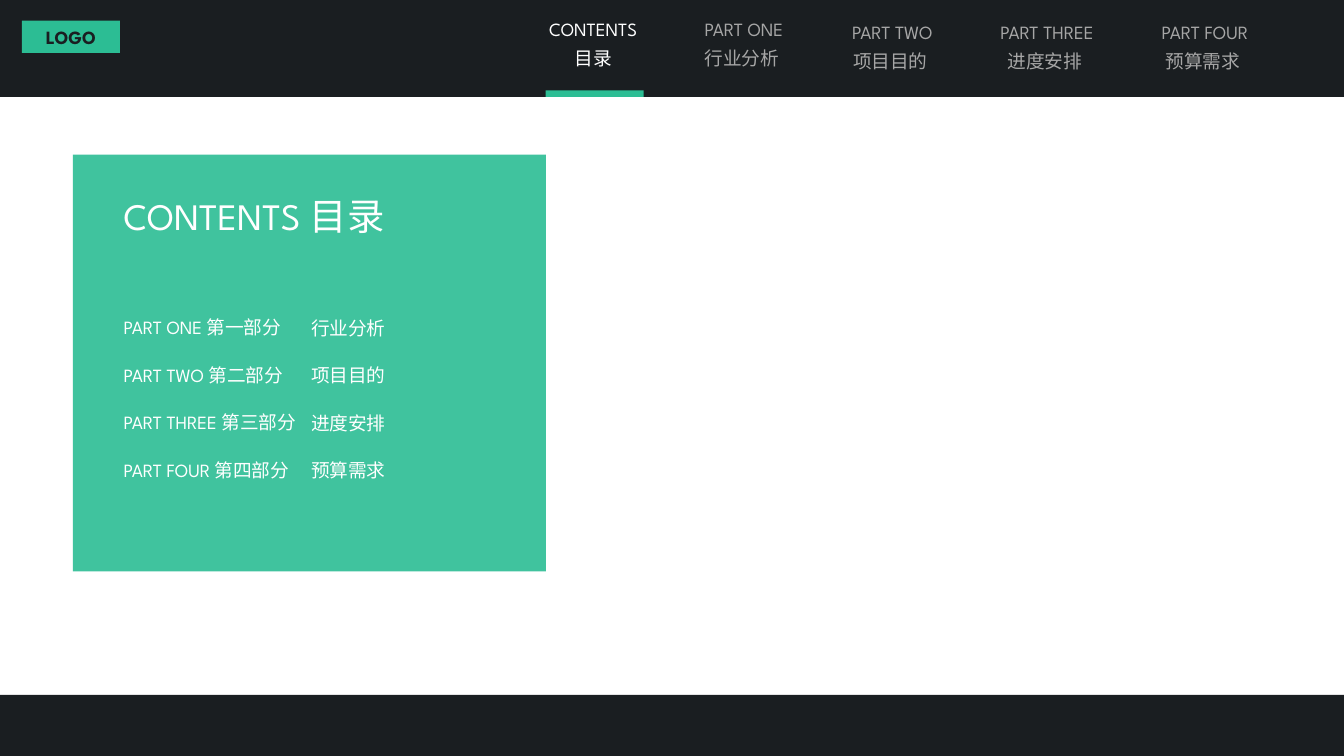
from lxml import etree
from pptx import Presentation
from pptx.dml.color import RGBColor
from pptx.enum.shapes import MSO_SHAPE
from pptx.enum.text import MSO_ANCHOR, MSO_AUTO_SIZE, PP_ALIGN
from pptx.oxml.ns import qn
from pptx.util import Inches, Pt

COLS, ROWS = 100, 56.25
CELL = Inches(0.1)
FONT = "League Spartan"
DARK, GREEN, GREY, WHITE = "1A1E21", "2CBD94", "A6A6A6", "FFFFFF"

PARTS = [
    ("PART ONE", "第一部分", "行业分析"),
    ("PART TWO", "第二部分", "项目目的"),
    ("PART THREE", "第三部分", "进度安排"),
    ("PART FOUR", "第四部分", "预算需求"),
]
TAB_BOXES = [(50.8, 0.35, 9.1), (61.75, 0.55, 9.3), (72.5, 0.55, 10.8), (84.65, 0.55, 10)]
LABEL_WIDTHS = [15, 15.3, 16.7, 16]


def color(value):
    return RGBColor.from_string(value)


def grid(*lengths):
    return [round(n * CELL) for n in lengths]


def style(tf, size, fill, align, bold=None, spacing=None):
    for p in tf.paragraphs:
        p.alignment = align
        p.line_spacing = spacing
        for r in p.runs:
            r.font.name = FONT
            r.font.size = Pt(size)
            r.font.bold = bold
            r.font.color.rgb = color(fill)


def add_block(slide, box, fill, opacity=None):
    sp = slide.shapes.add_shape(MSO_SHAPE.RECTANGLE, *grid(*box))
    sp.shadow.inherit = False
    sp.fill.solid()
    sp.fill.fore_color.rgb = color(fill)
    sp.line.fill.background()
    if opacity:
        clr = sp._element.spPr.find(qn("a:solidFill"))[0]
        etree.SubElement(clr, qn("a:alpha")).set("val", str(opacity * 1000))
    return sp


def add_text(slide, box, text, fill=WHITE, size=10, align=PP_ALIGN.LEFT):
    tf = slide.shapes.add_textbox(*grid(*box)).text_frame
    tf.text = text
    tf.word_wrap = False
    tf.auto_size = MSO_AUTO_SIZE.SHAPE_TO_FIT_TEXT
    style(tf, size, fill, align, spacing=1.3)


def add_header(slide, box):
    x, y, w, h = box
    add_block(slide, box, DARK)
    tf = add_block(slide, (x + 1.63, y + 1.54, 7.3, 2.4), GREEN).text_frame
    tf.text = "LOGO"
    tf.vertical_anchor = MSO_ANCHOR.MIDDLE
    style(tf, 10, DARK, PP_ALIGN.CENTER, bold=True)

    for (name, _, topic), (left, top, width) in zip(PARTS, TAB_BOXES):
        add_text(slide, (x + left, y + top, width, 5.3), f"{name}\n{topic} ",
                 GREY, align=PP_ALIGN.CENTER)
    add_block(slide, (x + 40.6, y + h - 0.5, 7.3, 0.5), GREEN)
    add_text(slide, (x + 39.33, y + 0.33, 9.6, 5.3), "CONTENTS\n目录",
             align=PP_ALIGN.CENTER)


def add_contents(slide, box):
    x, y, w, h = box
    add_block(slide, box, GREEN, opacity=90)
    add_text(slide, (x + 2.8, y + 1.4, 23.6, 5.3), "CONTENTS 目录", size=20)
    for i, ((name, number, topic), width) in enumerate(zip(PARTS, LABEL_WIDTHS)):
        top = y + 11.03 + i * 3.54
        add_text(slide, (x + 2.8, top, width, 3.2), f"{name} {number}")
        add_text(slide, (x + 16.75, top + 0.03, 8, 3.2), topic)


def add_footer(slide, box):
    add_block(slide, box, DARK)


def main():
    prs = Presentation()
    prs.slide_width, prs.slide_height = grid(COLS, ROWS)
    s = prs.slides.add_slide(prs.slide_layouts[6])
    add_header(s, (0, 0, COLS, 7.22))
    add_contents(s, (5.42, 11.5, 35.2, 31.03))
    add_footer(s, (0, 51.7, COLS, ROWS - 51.7))
    prs.save("out.pptx")


if __name__ == "__main__":
    main()
